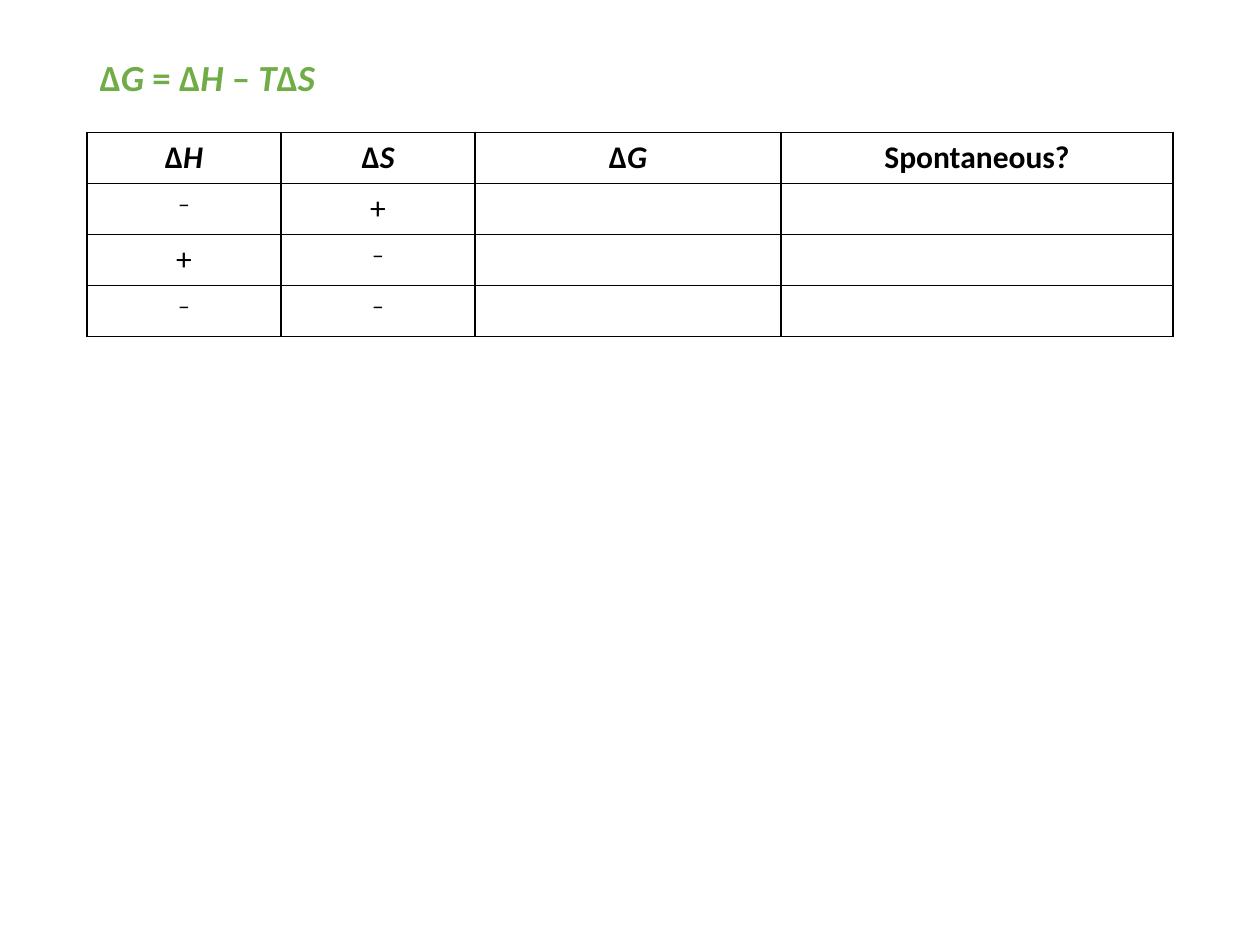
from typing import NamedTuple

from lxml.etree import SubElement
from pptx import Presentation
from pptx.dml.color import RGBColor
from pptx.enum.text import MSO_ANCHOR, PP_ALIGN
from pptx.oxml.ns import qn
from pptx.util import Inches, Pt

GREEN = RGBColor(0x70, 0xAD, 0x47)
BLACK = RGBColor(0x00, 0x00, 0x00)
FONT = "Calibri"

LEFT, WIDTH = Inches(0.69), Inches(8.62)
COLUMN_WIDTHS = (1.54, 1.54, 2.43, 3.11)
ROW_HEIGHT = Inches(0.405)


class Term(NamedTuple):
    text: str
    italic: bool = False


DELTA = Term("Δ")
EQUATION = (
    DELTA, Term("G", True), Term(" = Δ"), Term("H", True),
    Term(" – "), Term("T", True), DELTA, Term("S", True),
)
HEADINGS = (
    (DELTA, Term("H", True)),
    (DELTA, Term("S", True)),
    (DELTA, Term("G", True)),
    (Term("Spontaneous?"),),
)
SIGNS = (("–", "+"), ("+", "–"), ("–", "–"))


def write_terms(paragraph, terms: tuple[Term, ...], size: float,
                color: RGBColor, bold: bool) -> None:
    for term in terms:
        run = paragraph.add_run()
        run.text = term.text
        run.font.italic = term.italic
    font = paragraph.font
    font.name, font.size, font.bold = FONT, Pt(size), bold
    font.color.rgb = color


def style_cell(cell) -> None:
    """Draw black borders and remove the fill of the table style."""
    properties = cell._tc.get_or_add_tcPr()
    for side in ("a:lnL", "a:lnR", "a:lnT", "a:lnB"):
        line = SubElement(properties, qn(side), w=str(Pt(1)))
        fill = SubElement(line, qn("a:solidFill"))
        SubElement(fill, qn("a:srgbClr"), val=str(BLACK))
    cell.fill.background()


def add_equation(slide) -> None:
    title = slide.shapes.title
    title.left, title.top = LEFT, Inches(0.4)
    title.width, title.height = WIDTH, Inches(0.46)
    title.text_frame.vertical_anchor = MSO_ANCHOR.MIDDLE
    paragraph = title.text_frame.paragraphs[0]
    paragraph.alignment = PP_ALIGN.LEFT
    paragraph.line_spacing = 0.9
    write_terms(paragraph, EQUATION, 21, GREEN, bold=True)


def add_sign_table(slide) -> None:
    row_count = len(SIGNS) + 1
    table = slide.shapes.add_table(
        row_count, len(HEADINGS), LEFT, Inches(1.05), WIDTH, ROW_HEIGHT * row_count
    ).table
    table.first_row = table.horz_banding = False
    for column, width in zip(table.columns, COLUMN_WIDTHS):
        column.width = Inches(width)
    for row in table.rows:
        row.height = ROW_HEIGHT
    for cell in table.iter_cells():
        style_cell(cell)
        cell.text_frame.paragraphs[0].alignment = PP_ALIGN.CENTER

    for column, heading in enumerate(HEADINGS):
        paragraph = table.cell(0, column).text_frame.paragraphs[0]
        write_terms(paragraph, heading, 18, BLACK, bold=True)
    for row, signs in enumerate(SIGNS, start=1):
        for column, sign in enumerate(signs):
            paragraph = table.cell(row, column).text_frame.paragraphs[0]
            size = 13.5 if sign == "–" else 18
            write_terms(paragraph, (Term(sign),), size, BLACK, bold=False)


def main() -> None:
    presentation = Presentation()
    presentation.slide_width, presentation.slide_height = Inches(10), Inches(7.5)
    slide = presentation.slides.add_slide(presentation.slide_layouts[5])
    add_equation(slide)
    add_sign_table(slide)
    presentation.save("out.pptx")


if __name__ == "__main__":
    main()
